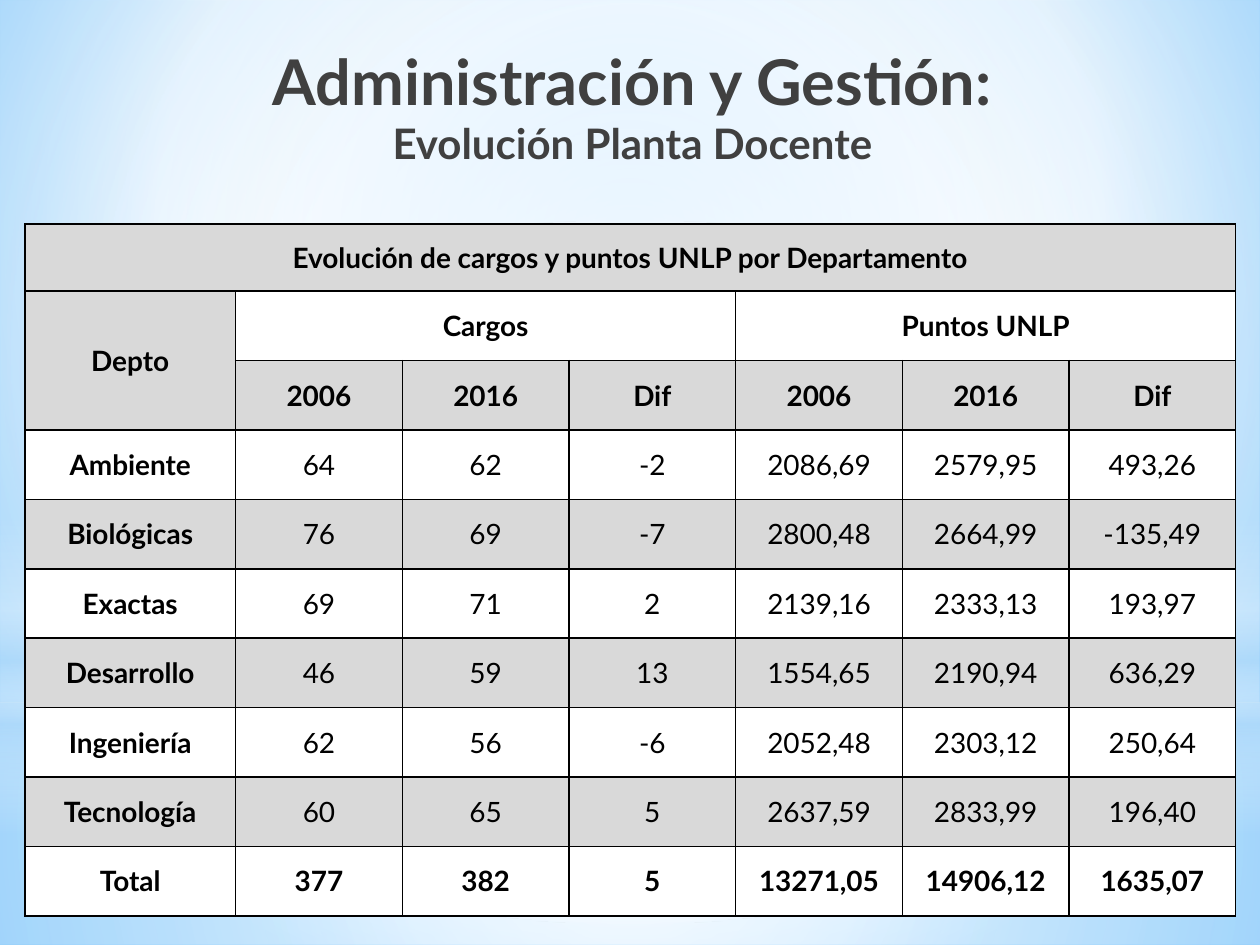
from typing import NamedTuple

from lxml import etree
from pptx import Presentation
from pptx.dml.color import RGBColor
from pptx.enum.shapes import MSO_SHAPE
from pptx.enum.text import MSO_ANCHOR, PP_ALIGN
from pptx.oxml.ns import qn
from pptx.util import Cm, Pt

RECTANGLE, OVAL = MSO_SHAPE.RECTANGLE, MSO_SHAPE.OVAL
MIDDLE, CENTER = MSO_ANCHOR.MIDDLE, PP_ALIGN.CENTER

BLACK = RGBColor(0x00, 0x00, 0x00)
WHITE = RGBColor(0xFF, 0xFF, 0xFF)
CHARCOAL = RGBColor(0x40, 0x40, 0x40)
GREY = RGBColor(0xD9, 0xD9, 0xD9)
PALE_BLUE = RGBColor(0xB4, 0xDC, 0xFA)
SKY_BLUE = RGBColor(0x9E, 0xD5, 0xFF)
DEEP_BLUE = RGBColor(0x5B, 0xB9, 0xFF)

FONT = "Lato"
WIDTH, HEIGHT = 25.4, 19.05
CENTERED = (50, 50, 50, 50)


class Stop(NamedTuple):
    position: int
    color: RGBColor
    opacity: int = 100


class Glow(NamedTuple):
    kind: MSO_SHAPE
    top: float
    height: float
    stops: list[Stop]
    focus: tuple[int, ...] | None = CENTERED  # None: runs top to bottom


GLOWS = [
    Glow(RECTANGLE, 14.17, 4.88,
         [Stop(0, WHITE, 91), Stop(37, WHITE, 76), Stop(100, PALE_BLUE, 79)]),
    Glow(RECTANGLE, 0, 14.17,
         [Stop(0, WHITE, 89), Stop(48, WHITE, 62), Stop(100, PALE_BLUE, 79)]),
    Glow(RECTANGLE, 10.46, 6.35,
         [Stop(0, WHITE, 0), Stop(29, WHITE, 30), Stop(45, PALE_BLUE, 40),
          Stop(55, WHITE, 26), Stop(65, PALE_BLUE, 60), Stop(100, WHITE, 0)], None),
    Glow(OVAL, 4.45, 14.17, [Stop(0, WHITE), Stop(56, WHITE, 0)]),
]

HEADINGS = [
    ["Evolución de cargos y puntos UNLP por Departamento"] + [""] * 6,
    ["Depto", "Cargos", "", "", "Puntos UNLP", "", ""],
    [""] + ["2006", "2016", "Dif"] * 2,
]
DEPARTMENTS = [
    ["Ambiente", "64", "62", "-2", "2086,69", "2579,95", "493,26"],
    ["Biológicas", "76", "69", "-7", "2800,48", "2664,99", "-135,49"],
    ["Exactas", "69", "71", "2", "2139,16", "2333,13", "193,97"],
    ["Desarrollo", "46", "59", "13", "1554,65", "2190,94", "636,29"],
    ["Ingeniería", "62", "56", "-6", "2052,48", "2303,12", "250,64"],
    ["Tecnología", "60", "65", "5", "2637,59", "2833,99", "196,40"],
]
TOTAL = ["Total", "377", "382", "5", "13271,05", "14906,12", "1635,07"]
ROWS = [*HEADINGS, *DEPARTMENTS, TOTAL]
MERGES = [((0, 0), (0, 6)), ((1, 0), (2, 0)), ((1, 1), (1, 3)), ((1, 4), (1, 6))]
COLUMN_WIDTHS = [4.25] + [3.36] * 6
ROW_HEIGHTS = [1.35] + [1.4] * 9

CELL_FORMAT = {"vertical_anchor": MIDDLE, "margin_left": 0, "margin_right": 0,
               "margin_top": 0, "margin_bottom": 0}
TITLE_FORMAT = {"word_wrap": True, "vertical_anchor": MIDDLE}


def apply_format(target, values: dict) -> None:
    for attribute, value in values.items():
        setattr(target, attribute, value)


def set_gradient(parent, stops: list[Stop], focus: tuple[int, ...] | None) -> None:
    """Swap the solid fill inside parent for a gradient."""
    gradient = etree.Element(qn("a:gradFill"), rotWithShape="1")
    stop_list = etree.SubElement(gradient, qn("a:gsLst"))
    for stop in stops:
        mark = etree.SubElement(stop_list, qn("a:gs"), pos=str(stop.position * 1000))
        color = etree.SubElement(mark, qn("a:srgbClr"), val=str(stop.color))
        if stop.opacity < 100:
            etree.SubElement(color, qn("a:alpha"), val=str(stop.opacity * 1000))
    if focus:
        circle = etree.SubElement(gradient, qn("a:path"), path="circle")
        edges = {side: str(share * 1000) for side, share in zip("ltrb", focus)}
        etree.SubElement(circle, qn("a:fillToRect"), **edges)
    else:
        etree.SubElement(gradient, qn("a:lin"), ang="5400000", scaled="0")
    parent.replace(parent.find(qn("a:solidFill")), gradient)


def add_glow(slide, glow: Glow) -> None:
    shape = slide.shapes.add_shape(glow.kind, 0, Cm(glow.top), Cm(WIDTH), Cm(glow.height))
    shape.shadow.inherit = False
    shape.line.fill.background()
    shape.fill.solid()
    set_gradient(shape.element.spPr, glow.stops, glow.focus)


def add_run(paragraph, text: str, size: int, color: RGBColor, bold: bool) -> None:
    run = paragraph.add_run()
    run.text = text
    apply_format(run.font, {"name": FONT, "size": Pt(size), "bold": bold})
    run.font.color.rgb = color


def add_borders(cell) -> None:
    properties = cell._tc.get_or_add_tcPr()
    for index, side in enumerate(("a:lnL", "a:lnR", "a:lnT", "a:lnB")):
        border = etree.Element(qn(side), w=str(Pt(1)))
        fill = etree.SubElement(border, qn("a:solidFill"))
        etree.SubElement(fill, qn("a:srgbClr"), val=str(BLACK))
        properties.insert(index, border)


def add_title(slide) -> None:
    title = slide.shapes.add_textbox(Cm(3.7), Cm(0.53), Cm(18.1), Cm(3.18)).text_frame
    apply_format(title, TITLE_FORMAT)
    heading = title.paragraphs[0]
    heading.alignment = CENTER
    add_run(heading, "Administración y Gestión:", 36, CHARCOAL, True)
    heading.add_line_break()
    add_run(heading, "Evolución Planta Docente", 24, CHARCOAL, True)


def add_staff_table(slide) -> None:
    staff = slide.shapes.add_table(
        len(ROWS), len(COLUMN_WIDTHS), Cm(0.5), Cm(4.52),
        Cm(sum(COLUMN_WIDTHS)), Cm(sum(ROW_HEIGHTS))).table
    for column, width in zip(staff.columns, COLUMN_WIDTHS):
        column.width = Cm(width)
    for row, height in zip(staff.rows, ROW_HEIGHTS):
        row.height = Cm(height)

    for r, values in enumerate(ROWS):
        for c, value in enumerate(values):
            cell = staff.cell(r, c)
            apply_format(cell, CELL_FORMAT)
            # Even rows are grey, as is the department heading over two rows
            shaded = r % 2 == 0 or (r, c) == (1, 0)
            cell.fill.solid()
            cell.fill.fore_color.rgb = GREY if shaded else WHITE
            add_borders(cell)
            if value:
                figure = c > 0 and len(HEADINGS) <= r < len(ROWS) - 1
                paragraph = cell.text_frame.paragraphs[0]
                paragraph.alignment = CENTER
                add_run(paragraph, value, 16, BLACK, not figure)
    for first, last in MERGES:
        staff.cell(*first).merge(staff.cell(*last))


def main() -> None:
    deck = Presentation()
    deck.slide_width, deck.slide_height = Cm(WIDTH), Cm(HEIGHT)
    slide = deck.slides.add_slide(deck.slide_layouts[6])

    # Background and light effects
    slide.background.fill.solid()
    set_gradient(slide.element.find(".//" + qn("p:bgPr")),
                 [Stop(0, SKY_BLUE), Stop(60, WHITE), Stop(100, DEEP_BLUE)],
                 (20, 10, 20, 60))
    for glow in GLOWS:
        add_glow(slide, glow)

    # Content
    add_title(slide)
    add_staff_table(slide)
    deck.save("out.pptx")


if __name__ == "__main__":
    main()
